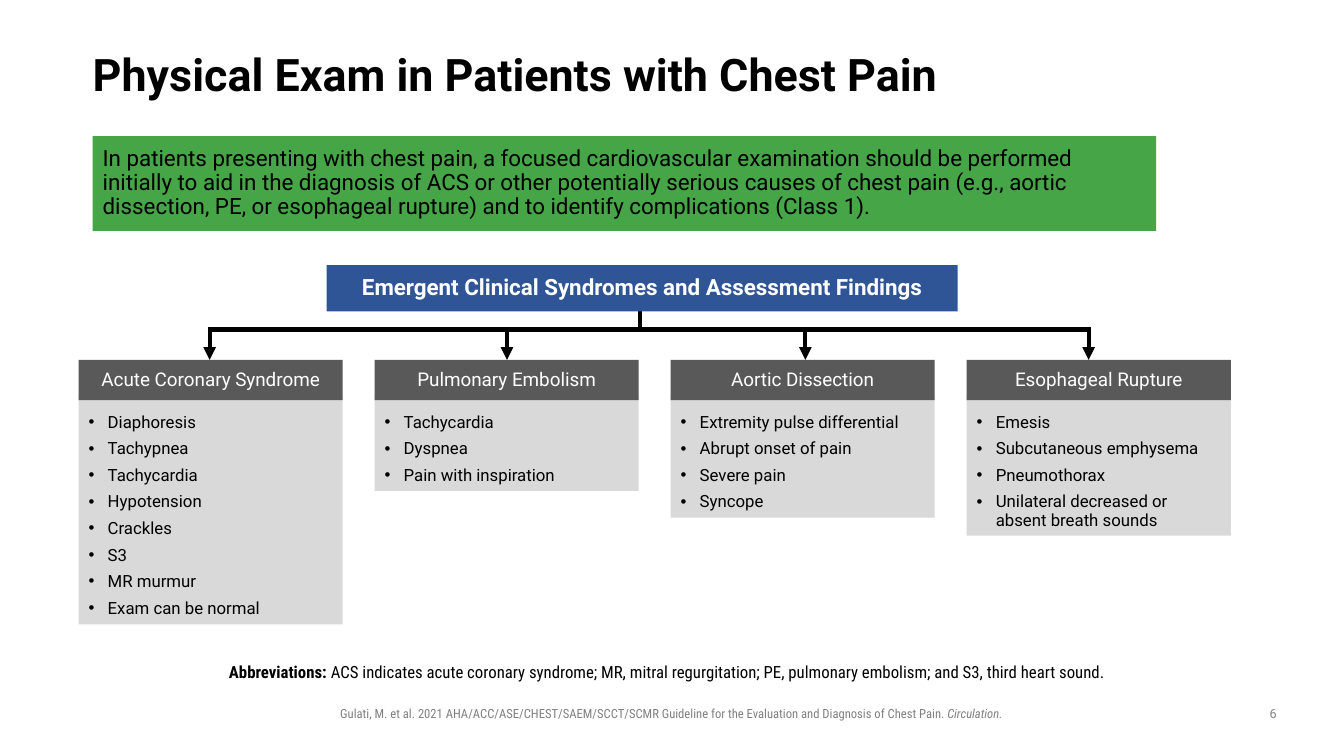
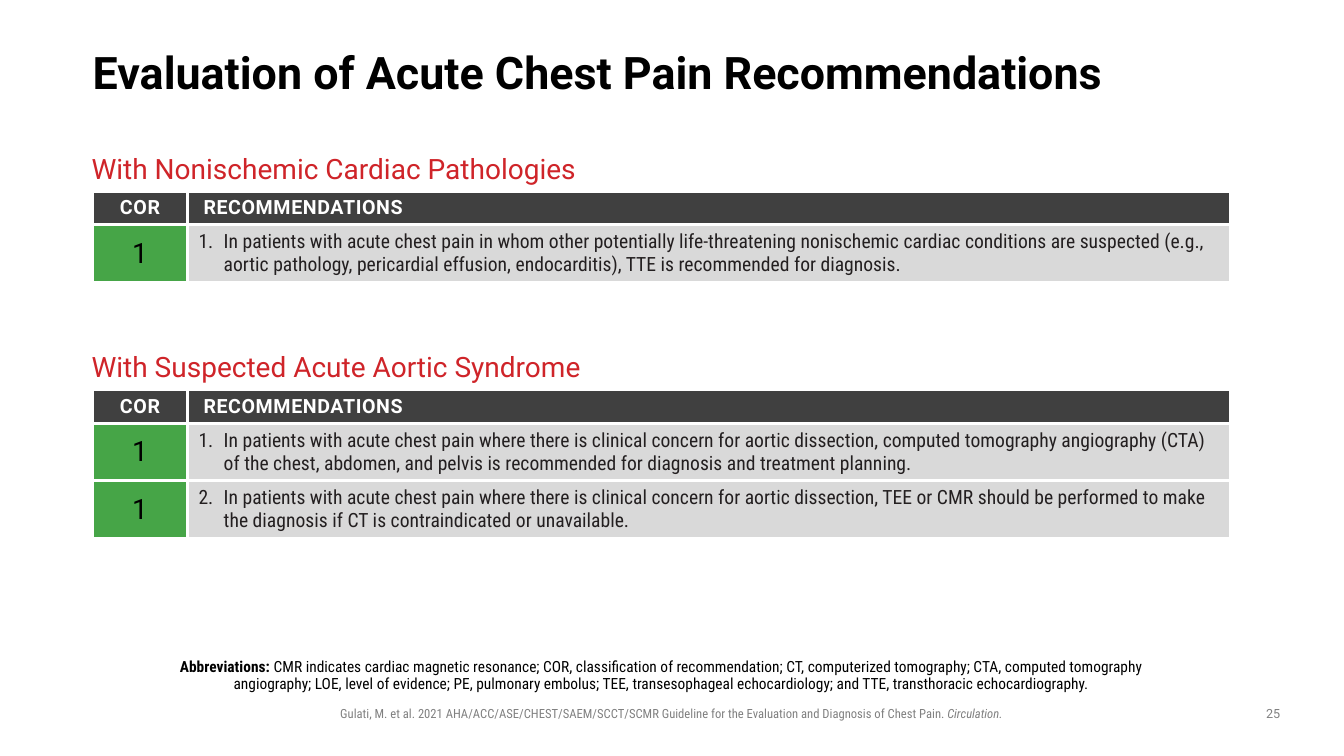
import dataclasses

import lxml.etree
import pptx
import pptx.dml.color
import pptx.enum.shapes
import pptx.enum.text
import pptx.oxml.ns
import pptx.util

COLORS = {
    "black": "000000", "white": "FFFFFF", "gray": "808080", "ink": "231F20",
    "green": "46A547", "blue": "2F5597", "red": "CF2429",
    "head": "595959", "table_head": "404040", "panel": "D9D9D9",
}
FONT = "Roboto"
NARROW = "Roboto Condensed"
GRID = pptx.util.Inches(0.1)
COLUMNS, ROWS = 133.33, 75
ALIGN = pptx.enum.text.PP_ALIGN
ANCHOR = pptx.enum.text.MSO_ANCHOR
CITATION = ("Gulati, M. et al. 2021 AHA/ACC/ASE/CHEST/SAEM/SCCT/SCMR Guideline for the "
            "Evaluation and Diagnosis of Chest Pain. ")


@dataclasses.dataclass
class Box:
    """A region in grid columns and rows."""
    left: float
    top: float
    width: float
    height: float

    def inner(self, left, top, width, height):
        """Return a region placed from this one's top left corner."""
        return Box(self.left + left, self.top + top, width, height)

    def lengths(self):
        """Return left, top, width and height as slide lengths."""
        return [grid(value) for value in (self.left, self.top, self.width, self.height)]


def grid(count):
    """Turn a count of grid steps into a length."""
    return pptx.util.Emu(round(count * GRID))


def color(name):
    """Look up a colour by name."""
    return pptx.dml.color.RGBColor.from_string(COLORS[name])


def add_xml(parent, tag, **attributes):
    """Append a DrawingML element."""
    return lxml.etree.SubElement(parent, pptx.oxml.ns.qn(tag), attributes)


def write(para, text, size=12, fill="black", font=FONT, bold=False, italic=False,
          align=ALIGN.LEFT, line=0.9, after=0, margin=0, hanging=0,
          bullet=None, number=None, tracking=None):
    """Add a span of text to a paragraph and format both."""
    para.alignment = align
    para.line_spacing = line
    para.space_before = pptx.util.Pt(0)
    para.space_after = pptx.util.Pt(after)
    if not para.runs:
        properties = para._p.get_or_add_pPr()
        properties.set("marL", str(grid(margin)))
        properties.set("indent", str(-grid(hanging)))
        if bullet:
            add_xml(properties, "a:buFont", typeface="Arial")
            add_xml(properties, "a:buChar", char=bullet)
        elif number:
            add_xml(properties, "a:buFont", typeface="+mj-lt")
            add_xml(properties, "a:buAutoNum", type="arabicPeriod", startAt=str(number))
        else:
            add_xml(properties, "a:buNone")
    span = para.add_run()
    span.text = text
    span.font.name = font
    span.font.size = pptx.util.Pt(size)
    span.font.bold = bold
    span.font.italic = italic
    span.font.color.rgb = color(fill)
    if tracking:
        span._r.get_or_add_rPr().set("spc", str(tracking))


def set_frame(frame, anchor=ANCHOR.TOP, insets=(1, 0.5, 1, 0.5)):
    """Set wrapping, anchor and insets, and return the first paragraph."""
    frame.word_wrap = True
    frame.auto_size = pptx.enum.text.MSO_AUTO_SIZE.NONE
    frame.vertical_anchor = anchor
    (frame.margin_left, frame.margin_top,
     frame.margin_right, frame.margin_bottom) = map(grid, insets)
    return frame.paragraphs[0]


def add_text(page, box, text, **style):
    """Place a text box and return its paragraph."""
    para = set_frame(page.shapes.add_textbox(*box.lengths()).text_frame)
    write(para, text, **style)
    return para


def add_panel(page, box, fill, anchor=ANCHOR.MIDDLE, insets=(0, 0, 0, 0)):
    """Place a filled rectangle and return its text frame."""
    panel = page.shapes.add_shape(pptx.enum.shapes.MSO_SHAPE.RECTANGLE, *box.lengths())
    panel.shadow.inherit = False
    panel.fill.solid()
    panel.fill.fore_color.rgb = color(fill)
    panel.line.fill.background()
    set_frame(panel.text_frame, anchor, insets)
    return panel.text_frame


def add_line(page, start, end, arrow=False):
    """Draw a heavy black line, with an arrowhead if asked."""
    line = page.shapes.add_connector(pptx.enum.shapes.MSO_CONNECTOR.STRAIGHT,
                                     *map(grid, start + end))
    line.line.color.rgb = color("black")
    line.line.width = pptx.util.Pt(3)
    stroke = line.line._get_or_add_ln()
    if arrow:
        add_xml(stroke, "a:tailEnd", type="triangle")
    else:
        stroke.set("cap", "sq")
    add_xml(line._element.spPr, "a:effectLst")


def place(holder, box, anchor, insets):
    """Move a placeholder and return its first paragraph."""
    holder.left, holder.top, holder.width, holder.height = box.lengths()
    return set_frame(holder.text_frame, anchor, insets)


def start_page(deck, title, title_box, abbreviations, note_box, note_size, number):
    """Add a slide with title, abbreviations, citation and number."""
    page = deck.slides.add_slide(deck.slide_layouts[1])
    heading = place(page.shapes.title, title_box, ANCHOR.MIDDLE, (0, 0, 0, 0))
    write(heading, title, size=32, bold=True)
    note = place(page.placeholders[1], note_box, ANCHOR.TOP, (0, 0.5, 1, 0.5))
    style = dict(size=note_size, font=NARROW, align=ALIGN.CENTER)
    write(note, "Abbreviations: ", bold=True, **style)
    write(note, abbreviations, **style)
    style = dict(size=9, fill="gray", align=ALIGN.CENTER, line=1)
    source = add_text(page, Box(31.7, 69.5, 69.8, 2.5), CITATION, font=NARROW, **style)
    write(source, "Circulation.", font=NARROW, italic=True, **style)
    add_text(page, Box(124.2, 69.5, 4.2, 2.6), number, **style)
    return page


def add_syndrome(page, box, name, findings):
    """Place a syndrome's heading over its list of findings."""
    wrapped = sum(len(finding) > 30 for finding in findings)
    height = 1.7 + 2.65 * len(findings) + 1.8 * wrapped
    frame = add_panel(page, box.inner(0, 3.35, box.width, height), "panel",
                      ANCHOR.TOP, (1, 2, 1, 0.5))
    for index, finding in enumerate(findings):
        para = frame.add_paragraph() if index else frame.paragraphs[0]
        write(para, finding, after=6, margin=1.9, hanging=1.9, bullet="•")
    head = add_panel(page, box.inner(0, 0, box.width, 4), "head")
    write(head.paragraphs[0], name, size=13.5, fill="white", align=ALIGN.CENTER)


def add_tree(page, box, root, syndromes, stems):
    """Place a root box with arrows down to a row of syndromes."""
    width, head_top = 26.2, 9.4
    step = (box.width - width) / (len(syndromes) - 1)
    for index, (name, findings) in enumerate(syndromes.items()):
        add_syndrome(page, box.inner(index * step, head_top, width, box.height - head_top),
                     name, findings)
    trunk, bar = box.left + 55.7, box.top + 6.4
    add_line(page, (trunk, box.top + 4.6), (trunk, bar))
    add_line(page, (box.left + stems[0], bar), (box.left + stems[-1], bar))
    for stem in stems:
        add_line(page, (box.left + stem, bar), (box.left + stem, box.top + head_top), arrow=True)
    frame = add_panel(page, box.inner(24.6, 0, 62.6, 4.6), "blue")
    write(frame.paragraphs[0], root, size=16, fill="white", bold=True, align=ALIGN.CENTER)


def fill_cell(cell, text, fill, insets=(0.5, 0.5, 0.5, 0.5), **style):
    """Fill a table cell, write its text and give it white borders."""
    cell.fill.solid()
    cell.fill.fore_color.rgb = color(fill)
    cell.vertical_anchor = ANCHOR.MIDDLE
    (cell.margin_left, cell.margin_top,
     cell.margin_right, cell.margin_bottom) = map(grid, insets)
    properties = cell._tc.get_or_add_tcPr()
    for index, side in enumerate("LRTB"):
        border = add_xml(properties, "a:ln" + side, w=str(pptx.util.Pt(2.25)))
        add_xml(add_xml(border, "a:solidFill"), "a:srgbClr", val=COLORS["white"])
        properties.insert(index, border)
    write(cell.text_frame.paragraphs[0], text, line=1, **style)


def add_section(page, box, heading, recommendations):
    """Place a red heading over a table of recommendations."""
    add_text(page, box.inner(0, 0, 65.6, 4), heading, size=20, fill="red")
    heights = [3.3] + [5.7] * len(recommendations)
    area = box.inner(1.1, 4.1, box.width - 1.1, sum(heights))
    table = page.shapes.add_table(len(heights), 2, *area.lengths()).table
    table.first_row = table.horz_banding = False
    for column, width in zip(table.columns, (9.4, area.width - 9.4)):
        column.width = grid(width)
    for row, height in zip(table.rows, heights):
        row.height = grid(height)
    style = dict(fill="table_head", insets=(1, 0.5, 1, 0.5))
    head = dict(size=14, bold=True)
    for column, (label, extra) in enumerate((
            ("COR", dict(align=ALIGN.CENTER, tracking=50)),
            ("RECOMMENDATIONS", dict(margin=0.6, tracking=40)))):
        fill_head(table.cell(0, column), label, style, head | extra)
    for number, text in enumerate(recommendations, 1):
        fill_body(table.cell(number, 0), "1", "green",
                  dict(size=20, align=ALIGN.CENTER))
        fill_body(table.cell(number, 1), text, "panel",
                  dict(size=14, font=NARROW, margin=3.1, hanging=2.5, number=number), "ink")


def fill_head(cell, label, style, text_style):
    """Fill a heading cell with white text."""
    fill_cell(cell, label, style["fill"], style["insets"], **text_style)
    cell.text_frame.paragraphs[0].runs[0].font.color.rgb = color("white")


def fill_body(cell, text, fill, text_style, ink="black"):
    """Fill a body cell with dark text."""
    fill_cell(cell, text, fill, **text_style)
    cell.text_frame.paragraphs[0].runs[0].font.color.rgb = color(ink)


def build_exam(deck):
    """Build the slide on the physical exam."""
    page = start_page(
        deck, "Physical Exam in Patients with Chest Pain", Box(9.2, 4, 115, 7.2),
        "ACS indicates acute coronary syndrome; MR, mitral regurgitation; PE, pulmonary "
        "embolism; and S3, third heart sound.", Box(9.2, 65.4, 115, 3), 12, "6")
    advice = add_panel(page, Box(9.2, 13.5, 105.5, 9.4), "green", insets=(1, 0.5, 1, 0.5))
    write(advice.paragraphs[0],
          "In patients presenting with chest pain, a focused cardiovascular examination should "
          "be performed initially to aid in the diagnosis of ACS or other potentially serious "
          "causes of chest pain (e.g., aortic dissection, PE, or esophageal rupture) and to "
          "identify complications (Class 1).", size=16)
    syndromes = {
        "Acute Coronary Syndrome": [
            "Diaphoresis", "Tachypnea", "Tachycardia", "Hypotension", "Crackles", "S3",
            "MR murmur", "Exam can be normal"],
        "Pulmonary Embolism": ["Tachycardia", "Dyspnea", "Pain with inspiration"],
        "Aortic Dissection": [
            "Extremity pulse differential", "Abrupt onset of pain", "Severe pain", "Syncope"],
        "Esophageal Rupture": [
            "Emesis", "Subcutaneous emphysema", "Pneumothorax",
            "Unilateral decreased or absent breath sounds"],
    }
    add_tree(page, Box(7.8, 26.3, 114.3, 35.8),
             "Emergent Clinical Syndromes and Assessment Findings", syndromes,
             (13, 42.5, 72.1, 100.2))


def build_recommendations(deck):
    """Build the slide on recommendations."""
    page = start_page(
        deck, "Evaluation of Acute Chest Pain Recommendations", Box(9.2, 5, 113.9, 4.9),
        "CMR indicates cardiac magnetic resonance; COR, classification of recommendation; CT, "
        "computerized tomography; CTA, computed tomography angiography; LOE, level of evidence; "
        "PE, pulmonary embolus; TEE, transesophageal echocardiology; and TTE, transthoracic "
        "echocardiography.", Box(14, 64.9, 104.3, 5.1), 11, "25")
    add_section(page, Box(8.1, 14.9, 114, 13.1), "With Nonischemic Cardiac Pathologies", [
        "In patients with acute chest pain in whom other potentially life-threatening "
        "nonischemic cardiac conditions are suspected (e.g., aortic pathology, pericardial "
        "effusion, endocarditis), TTE is recommended for diagnosis."])
    add_section(page, Box(8.1, 34.6, 114, 18.8), "With Suspected Acute Aortic Syndrome", [
        "In patients with acute chest pain where there is clinical concern for aortic "
        "dissection, computed tomography angiography (CTA) of the chest, abdomen, and pelvis "
        "is recommended for diagnosis and treatment planning.",
        "In patients with acute chest pain where there is clinical concern for aortic "
        "dissection, TEE or CMR should be performed to make the diagnosis if CT is "
        "contraindicated or unavailable."])


def main():
    """Build and save the deck."""
    deck = pptx.Presentation()
    deck.slide_width, deck.slide_height = grid(COLUMNS), grid(ROWS)
    build_exam(deck)
    build_recommendations(deck)
    deck.save("out.pptx")


if __name__ == "__main__":
    main()
